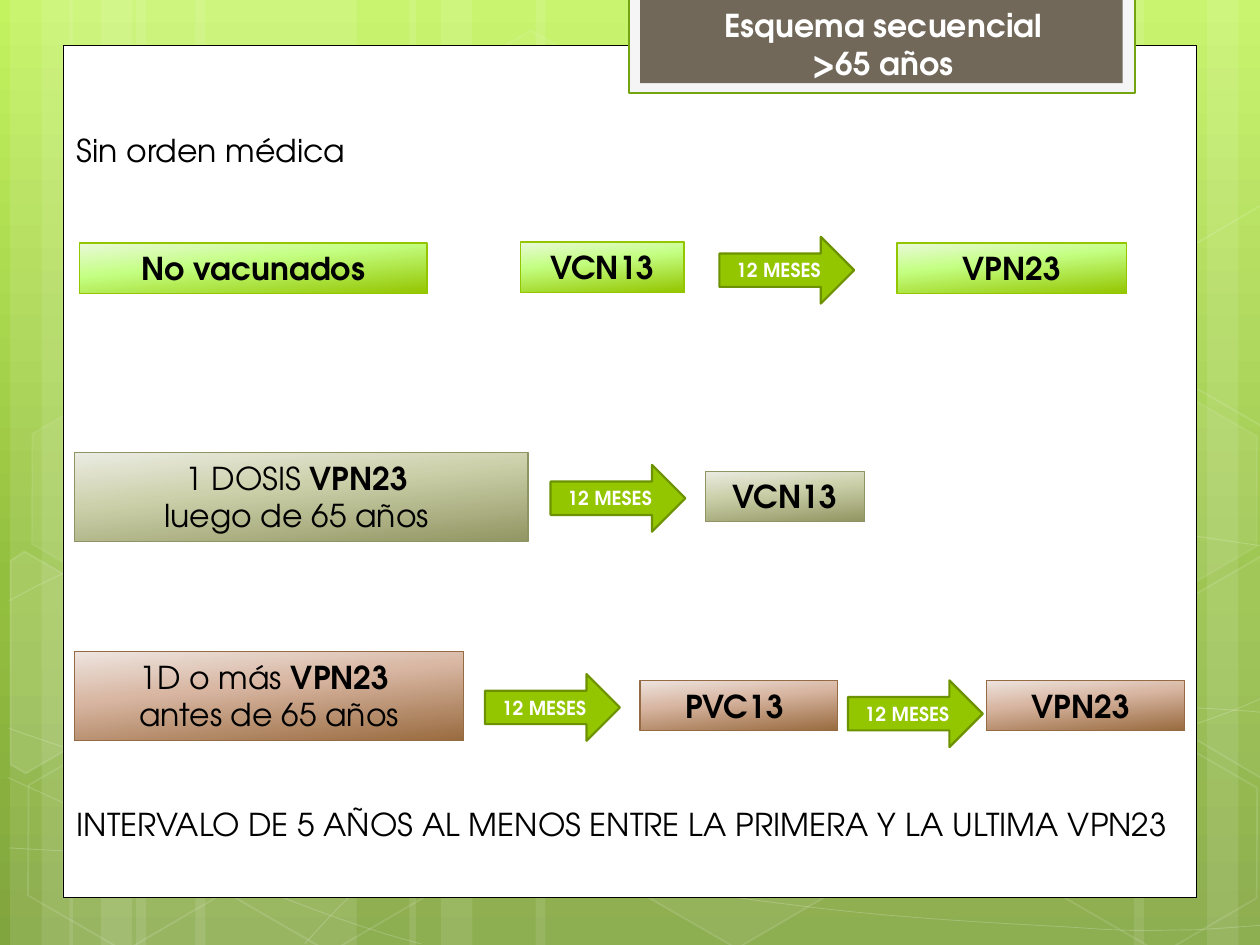
from copy import deepcopy
from dataclasses import dataclass
from math import cos, radians, sin

from lxml.etree import SubElement
from pptx import Presentation
from pptx.dml.color import RGBColor
from pptx.enum.shapes import MSO_SHAPE
from pptx.enum.text import MSO_ANCHOR, MSO_AUTO_SIZE, PP_ALIGN
from pptx.oxml.ns import qn
from pptx.util import Pt

PX = 9144  # 100 px to the inch
TILT = 30  # degrees, for every hexagon


@dataclass(frozen=True)
class Theme:
    font: str = "TeX Gyre Adventor"
    body: int = 18
    small: int = 11
    ink: str = "000000"
    paper: str = "FFFFFF"
    tab: str = "F5F5F5"
    tab_edge: str = "74A510"
    tab_core: str = "71685A"
    arrow: str = "94C600"
    arrow_edge: str = "6D9200"
    backdrop: tuple = ((0, "C3F35F"), (62, "93BF3F"), (100, "81A53E"))
    # Palettes: gradient stops and edge
    lime: tuple = (((0, "EAF9DA"), (40, "C4FF82"), (100, "94C600")), "94C600")
    olive: tuple = (((0, "EBECE3"), (40, "CDD1AB"), (100, "929663")), "909465")
    brown: tuple = (((0, "EEE5E0"), (40, "D8B6A2"), (100, "996B3F")), "956B43")


THEME = Theme()

# Backdrop stripes: left, width
STRIPES = [(108, 175), (8, 50), (33, 83), (155, 175), (55, 50), (80, 83),
           (733, 175), (958, 50), (900, 83), (425, 308), (325, 50), (350, 83)]

# Backdrop curves: start point, then Bezier triples
CURVES = [
    [(7, 673), (61, 676), (115, 679), (190, 678), (265, 677), (358, 675), (458, 665),
     (558, 655), (700, 636), (792, 617), (883, 598), (977, 568), (1007, 551)],
    [(7, 477), (36, 461), (65, 446), (121, 431), (178, 416), (259, 394), (347, 387),
     (436, 380), (544, 379), (654, 387), (764, 395), (947, 426), (1007, 434)],
    [(6, 617), (127, 672), (247, 727), (334, 749)],
    [(7, 578), (38, 589), (70, 600), (128, 616), (186, 631), (273, 656), (357, 673),
     (440, 690), (545, 708), (628, 718), (711, 729), (800, 733), (853, 736),
     (905, 740), (919, 738), (945, 738), (971, 737), (989, 735), (1007, 734)],
    [(242, 749), (260, 729), (278, 709), (302, 691), (326, 673), (360, 653), (388, 639),
     (416, 625), (433, 619), (470, 609), (506, 599), (573, 585), (608, 578),
     (644, 571), (649, 571), (680, 569), (711, 566), (760, 563), (794, 562),
     (829, 561), (886, 562), (886, 562), (908, 562), (931, 562), (953, 562),
     (971, 563), (988, 564), (997, 565), (1006, 566), (1003, 565), (1006, 566)],
]

# Whole hexagons: left, top, fill opacity, line opacity
HEXAGONS = [(334, 36, 4, 8), (497, 589, 6, 12), (11, 591, 0, 12), (14, 312, 7, 8),
            (174, 592, 0, 12), (753, 453, 10, 12), (834, 593, 0, 12), (834, 314, 7, 8)]

# Hexagons cut by the slide edge: centre, corners, fill opacity
CUT_HEXAGONS = [
    ((36, 535), [(8, 445), (19, 438), (96, 482), (95, 570), (20, 614), (8, 607)], 10),
    ((985, 520), [(926, 485), (1001, 441), (1009, 446), (1009, 613), (1002, 617), (926, 573)], 4),
    ((985, 241), [(926, 207), (1001, 163), (1010, 168), (1009, 335), (1002, 339), (926, 295)], 0),
]

INTERVAL = "12 MESES"

# Rows: left, top, palette, boxes (lines of (text, bold) runs, x, y, w, h), arrows (x, y)
ROWS = [
    (63, 192, THEME.lime,
     [([[(" No vacunados ", True)]], 0, 1, 276, 40),
      ([[("VCN13", True)]], 350, 0, 130, 40),
      ([[("VPN23", True)]], 649, 1, 182, 40)],
     [(508, -4)]),
    (59, 359, THEME.olive,
     [([[("1 DOSIS ", False), ("VPN23 ", True)], [("luego de 65 años ", False)]], 0, 0, 360, 71),
      ([[("VCN13", True)]], 501, 15, 126, 40)],
     [(378, 10)]),
    (59, 517, THEME.brown,
     [([[("1D o más ", False), ("VPN23 ", True)], [("antes de 65 años", False)]], 0, 0, 309, 71),
      ([[("PVC13 ", True)]], 449, 23, 157, 40),
      ([[("VPN23 ", True)]], 724, 23, 157, 40)],
     [(326, 18), (614, 23)]),
]


def emu(*lengths):
    return [length * PX for length in lengths]


def set_gradient(fill, element, stops, angle):
    fill.gradient()
    fill.gradient_angle = 360 - angle
    stop_list = element.xpath(".//a:gsLst")[0]
    stop_list.append(deepcopy(stop_list[-1]))
    for stop, (position, color) in zip(fill.gradient_stops, stops):
        stop.position = position / 100
        stop.color.rgb = RGBColor.from_string(color)


def set_opacity(shape, where, percent):
    for color in shape._element.xpath(f"./p:spPr/{where}a:solidFill/a:srgbClr"):
        SubElement(color, qn("a:alpha")).set("val", str(percent * 1000))


def style(shape, fill=None, line=None, width=0, fill_opacity=100, line_opacity=100):
    shape.shadow.inherit = False
    if fill:
        shape.fill.solid()
        shape.fill.fore_color.rgb = RGBColor.from_string(fill)
        if fill_opacity < 100:
            set_opacity(shape, "", fill_opacity)
    else:
        shape.fill.background()
    if line:
        shape.line.color.rgb = RGBColor.from_string(line)
        shape.line.width = Pt(width)
        if line_opacity < 100:
            set_opacity(shape, "a:ln/", line_opacity)
    else:
        shape.line.fill.background()
    return shape


def add_preset(slide, kind, box, **look):
    return style(slide.shapes.add_shape(kind, *emu(*box)), **look)


def add_outline(slide, points, close, **look):
    builder = slide.shapes.build_freeform(*points[0], scale=PX)
    builder.add_line_segments(points[1:], close=close)
    return style(builder.convert_to_shape(), **look)


def bend(outline):
    """Turn each three straight segments into one Bezier segment."""
    segments = outline._element.xpath(".//a:lnTo")
    for first in range(0, len(segments), 3):
        triple = segments[first:first + 3]
        outline_parent = triple[0].getparent()
        curve = SubElement(outline_parent, qn("a:cubicBezTo"))
        for segment in triple:
            curve.append(segment[0])
            outline_parent.remove(segment)


def turn(points, center, degrees):
    c, s = cos(radians(degrees)), sin(radians(degrees))
    cx, cy = center
    return [(cx + (x - cx) * c - (y - cy) * s, cy + (x - cx) * s + (y - cy) * c)
            for x, y in points]


def write(frame, lines, size, color, align=PP_ALIGN.CENTER, anchor=MSO_ANCHOR.TOP, wrap=True):
    frame.word_wrap = wrap
    frame.auto_size = MSO_AUTO_SIZE.NONE
    frame.vertical_anchor = anchor
    for index, runs in enumerate(lines):
        paragraph = frame.add_paragraph() if index else frame.paragraphs[0]
        paragraph.alignment = align
        for text, bold in runs:
            run = paragraph.add_run()
            run.text = text
            run.font.name, run.font.size, run.font.bold = THEME.font, Pt(size), bold
            run.font.color.rgb = RGBColor.from_string(color)


def draw_backdrop(slide):
    white = THEME.paper
    set_gradient(slide.background.fill, slide._element, THEME.backdrop, 90)
    for left, width in STRIPES:
        add_preset(slide, MSO_SHAPE.RECTANGLE, (left, 0, width, 750), fill=white, fill_opacity=10)
    for knots in CURVES:
        bend(add_outline(slide, knots, False, line=white, width=0.5, line_opacity=20))
    for left, top, opacity, edge in HEXAGONS:
        hexagon = add_preset(slide, MSO_SHAPE.HEXAGON, (left, top, 175, 152),
                             fill=white if opacity else None, fill_opacity=opacity,
                             line=white, width=1, line_opacity=edge)
        hexagon.adjustments[0] = 0.285
        hexagon.rotation = TILT
    for center, corners, opacity in CUT_HEXAGONS:
        cut = add_outline(slide, turn(corners, center, -TILT), True,
                          fill=white if opacity else None, fill_opacity=opacity,
                          line=white, width=1, line_opacity=12)
        cut.rotation = TILT


def draw_title(slide, left, top):
    # Tab behind the title
    add_preset(slide, MSO_SHAPE.RECTANGLE, (left, top, 402, 76),
               fill=THEME.tab, line=THEME.tab_edge, width=1.25)
    add_preset(slide, MSO_SHAPE.RECTANGLE, (left + 9, top, 383, 68), fill=THEME.tab_core)
    title = slide.shapes.title
    title.left, title.top, title.width, title.height = emu(left - 36, top + 2, 476, 71)
    write(title.text_frame, [[("Esquema secuencial", True)], [(">65 años", True)]],
          THEME.body, THEME.paper)
    slide.shapes._spTree.append(title._element)  # in front of the tab


def draw_row(slide, left, top, palette, boxes, arrows):
    stops, edge = palette
    for lines, x, y, width, height in boxes:
        dose = add_preset(slide, MSO_SHAPE.RECTANGLE, (left + x, top + y, width, height),
                          line=edge, width=0.75)
        set_gradient(dose.fill, dose._element, stops, 84)
        write(dose.text_frame, lines, THEME.body, THEME.ink)
    for x, y in arrows:
        interval = add_preset(slide, MSO_SHAPE.RIGHT_ARROW, (left + x, top + y, 107, 53),
                              fill=THEME.arrow, line=THEME.arrow_edge, width=1.25)
        write(interval.text_frame, [[(INTERVAL, True)]], THEME.small, THEME.paper,
              anchor=MSO_ANCHOR.MIDDLE)


def draw_note(slide, box, text, wrap=True):
    note = slide.shapes.add_textbox(*emu(*box))
    write(note.text_frame, [[(text, False)]], THEME.body, THEME.ink, PP_ALIGN.LEFT, wrap=wrap)


def main():
    deck = Presentation()
    deck.slide_width, deck.slide_height = emu(1000, 750)
    slide = deck.slides.add_slide(deck.slide_layouts[5])
    draw_backdrop(slide)
    # White sheet
    add_preset(slide, MSO_SHAPE.RECTANGLE, (50, 36, 900, 676),
               fill=THEME.paper, line=THEME.ink, width=0.5)
    draw_title(slide, 499, -2)
    draw_note(slide, (51, 99, 890, 40), "Sin orden médica")
    for row in ROWS:
        draw_row(slide, *row)
    draw_note(slide, (51, 634, 902, 40),
              "INTERVALO DE 5 AÑOS AL MENOS ENTRE LA PRIMERA Y LA ULTIMA VPN23", wrap=False)
    deck.save("out.pptx")


if __name__ == "__main__":
    main()
